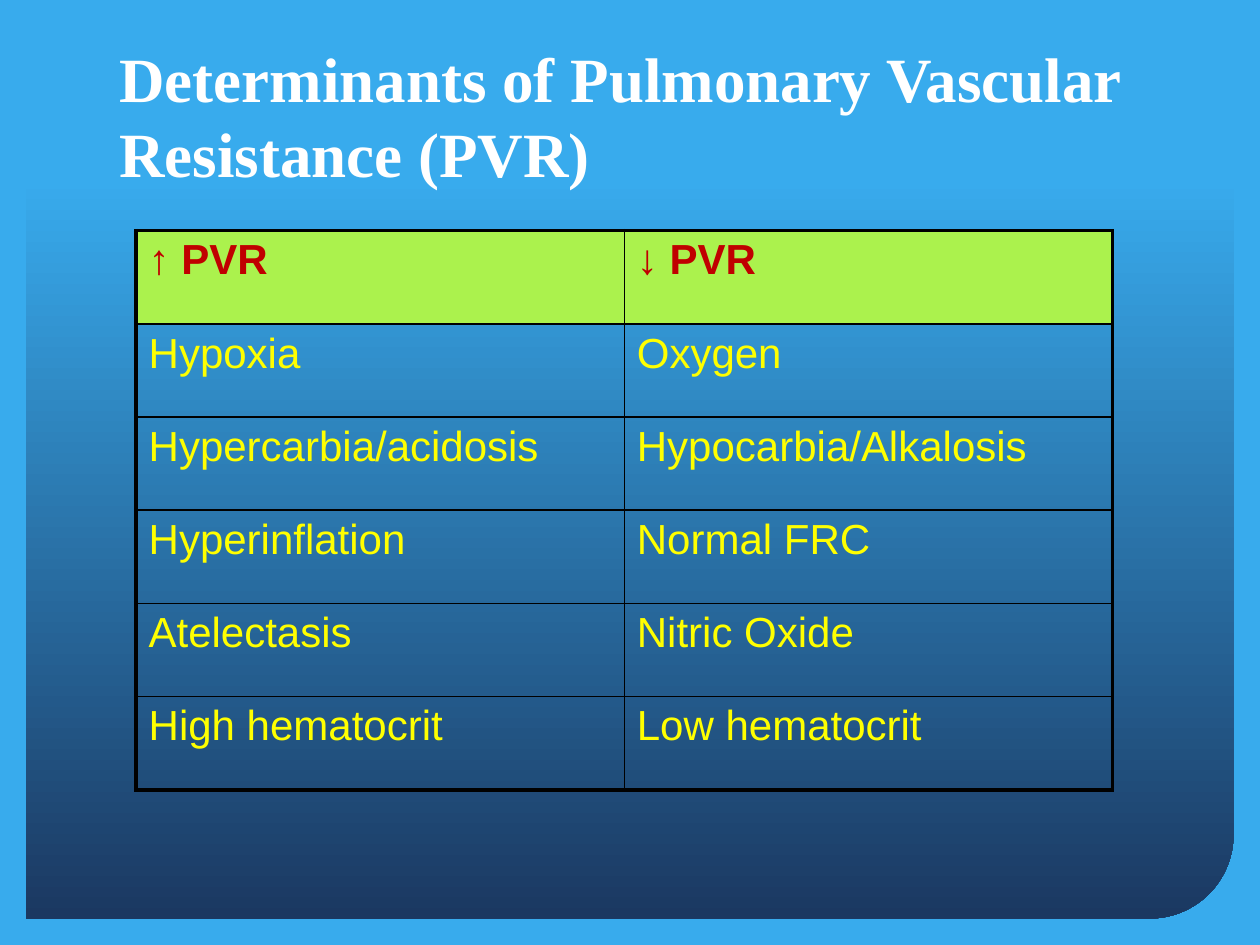
from lxml import etree
from pptx import Presentation
from pptx.dml.color import RGBColor
from pptx.enum import shapes, text
from pptx.oxml.ns import qn
from pptx.util import Inches, Pt

COLORS = {
    "sky": "38ABED",
    "navy": "1B3861",
    "title": "FFFFFF",
    "header_fill": "ABF24D",
    "header_text": "C00000",
    "body_text": "FFFF00",
    "border": "000000",
}
FACTORS = [
    ("↑ PVR", "↓ PVR"),
    ("Hypoxia", "Oxygen"),
    ("Hypercarbia/acidosis", "Hypocarbia/Alkalosis"),
    ("Hyperinflation", "Normal FRC"),
    ("Atelectasis", "Nitric Oxide"),
    ("High hematocrit", "Low hematocrit"),
]
THIN, THICK = 1, 2.25


def add_run(paragraph, words, font_name, size, color, bold):
    run = paragraph.add_run()
    run.text = words
    run.font.name = font_name
    run.font.size = Pt(size)
    run.font.bold = bold
    run.font.color.rgb = RGBColor.from_string(COLORS[color])


def add_border(cell, side, width):
    line = etree.SubElement(cell._tc.get_or_add_tcPr(), qn(f"a:{side}"), w=str(Pt(width)))
    fill = etree.SubElement(line, qn("a:solidFill"))
    etree.SubElement(fill, qn("a:srgbClr"), val=COLORS["border"])


presentation = Presentation()
presentation.slide_width = Inches(10)
presentation.slide_height = Inches(7.5)
slide = presentation.slides.add_slide(presentation.slide_layouts[6])

# Background and gradient panel
slide.background.fill.solid()
slide.background.fill.fore_color.rgb = RGBColor.from_string(COLORS["sky"])
margin = Inches(0.21)
panel = slide.shapes.add_shape(
    shapes.MSO_SHAPE.ROUND_2_DIAG_RECTANGLE, margin, margin,
    presentation.slide_width - 2 * margin, presentation.slide_height - 2 * margin)
panel.adjustments[0] = 0.094
panel.adjustments[1] = 0
panel.shadow.inherit = False
panel.line.fill.background()
panel.fill.gradient()
panel.fill.gradient_angle = 270
for stop, color, position in zip(panel.fill.gradient_stops, ("sky", "navy"), (0.17, 1)):
    stop.color.rgb = RGBColor.from_string(COLORS[color])
    stop.position = position

# Title
title = slide.shapes.add_textbox(Inches(0.85), Inches(0.42), Inches(8.29), Inches(1.14))
title.text_frame.word_wrap = True
title.text_frame.vertical_anchor = text.MSO_ANCHOR.BOTTOM
add_run(title.text_frame.paragraphs[0], "Determinants of Pulmonary Vascular Resistance (PVR)",
        "Times New Roman", 36, "title", True)

# Table of factors that raise and lower resistance
row_count, column_count = len(FACTORS), len(FACTORS[0])
table = slide.shapes.add_table(row_count, column_count, Inches(1.08), Inches(1.83),
                               Inches(7.75), Inches(0.74) * row_count).table
table.horz_banding = False
for row, factors in enumerate(FACTORS):
    for column, factor in enumerate(factors):
        cell = table.cell(row, column)
        header = row == 0
        add_run(cell.text_frame.paragraphs[0], factor, "Arial", 24,
                "header_text" if header else "body_text", header)

        # Thick lines around the table, thin lines inside
        outer_edges = {
            "lnL": column == 0,
            "lnR": column == column_count - 1,
            "lnT": row == 0,
            "lnB": row == row_count - 1,
        }
        for side, outer in outer_edges.items():
            add_border(cell, side, THICK if outer else THIN)

        if header:
            cell.fill.solid()
            cell.fill.fore_color.rgb = RGBColor.from_string(COLORS["header_fill"])
        else:
            cell.fill.background()

presentation.save("out.pptx")
